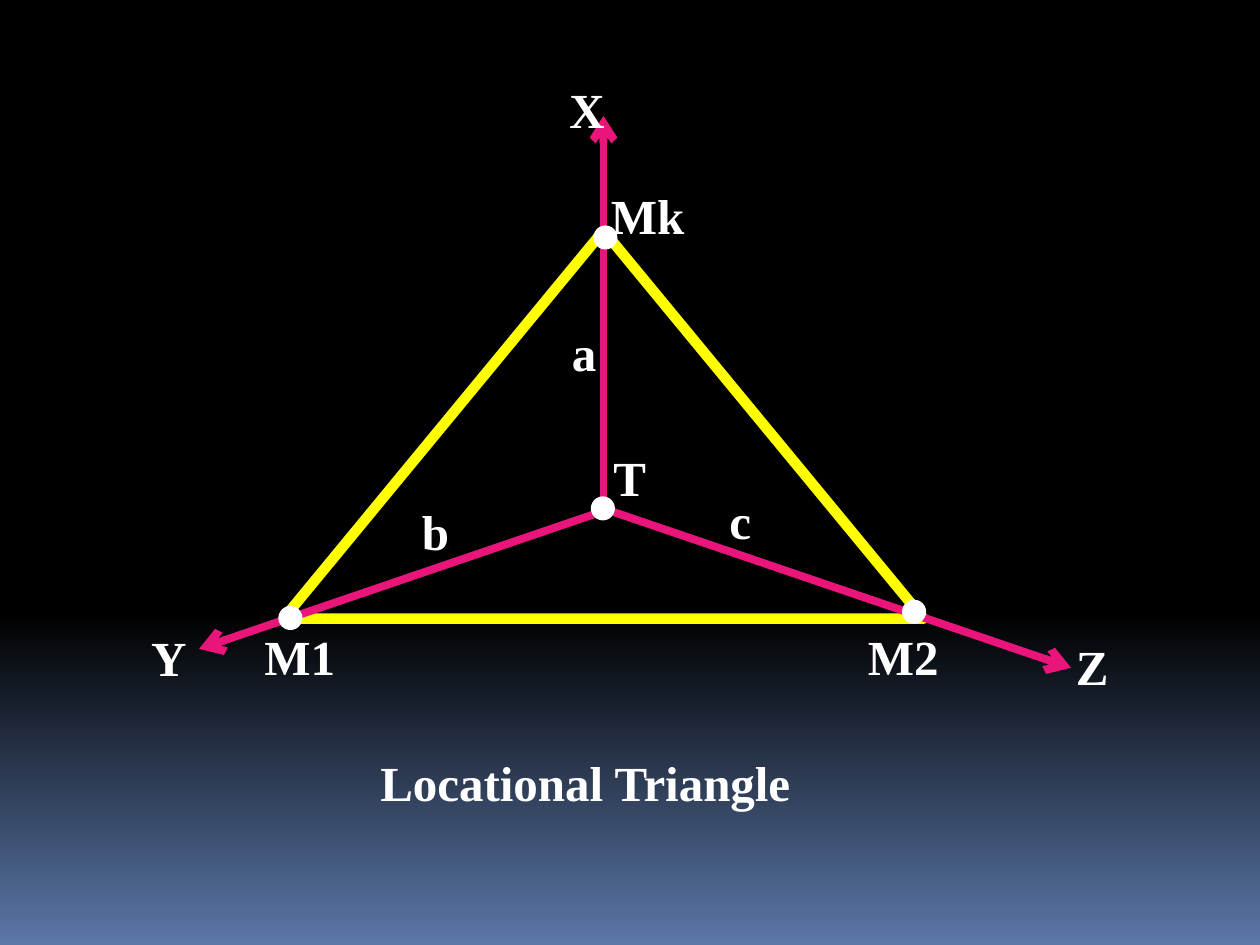
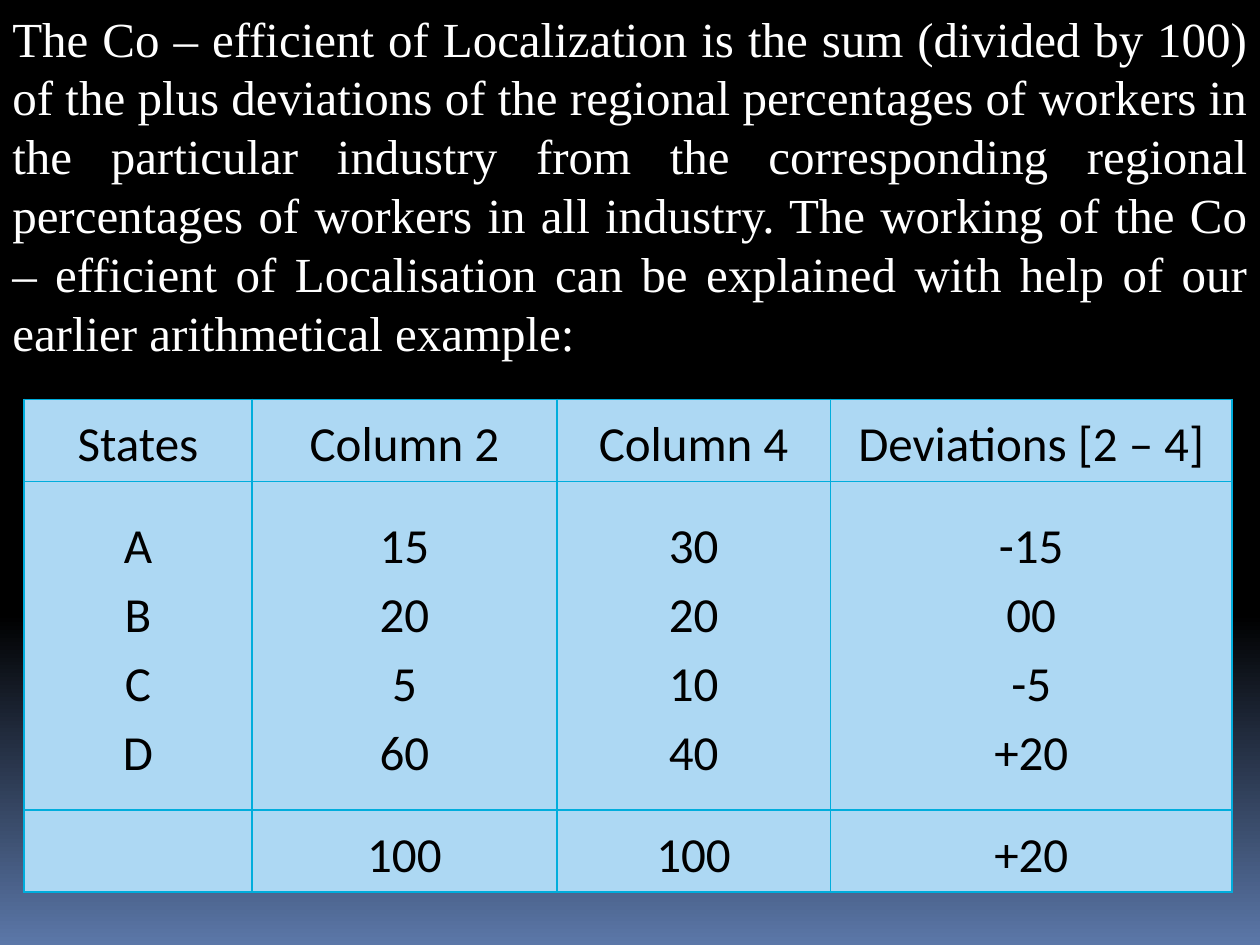
from lxml import etree
from pptx import Presentation
from pptx.dml.color import RGBColor
from pptx.enum import shapes, text
from pptx.oxml.ns import qn
from pptx.util import Inches, Pt

BLACK, WHITE, DUSK = "000000", "FFFFFF", "5B77A8"
YELLOW, PINK, SKY, CYAN = "FFFF00", "EA157A", "ADD8F3", "00ADDC"
SERIF, SANS, SIZE = "Times New Roman", "Calibri", 28

TRIANGLE = (2.25, 1.83, 5.08, 3.08)
AXES = [
    ((4.79, 4), (4.79, 0.92)),
    ((4.83, 4.05), (8.5, 5.3)),
    ((4.75, 4.07), (1.58, 5.15)),
]
DOT = 0.17
DOTS = [(4.72, 1.8), (4.7, 3.95), (2.22, 4.82), (7.17, 4.77)]
LABEL_HEIGHT = 0.57
LABELS = [
    ("Mk", 4.75, 1.42, 0.79),
    ("M2", 6.79, 4.92, 0.77),
    ("M1", 2, 4.92, 0.77),
    ("a", 4.44, 2.51, 0.4),
    ("T", 4.77, 3.5, 0.46),
    ("c", 5.69, 3.84, 0.38),
    ("b", 3.25, 3.93, 0.42),
    ("X", 4.42, 0.58, 0.49),
    ("Y", 1.1, 4.93, 0.49),
    ("Z", 8.44, 5, 0.46),
]
CAPTION = "Locational Triangle"

DEFINITION = (
    "The Co – efficient of Localization is the sum (divided by 100) of the plus "
    "deviations of the regional percentages of workers in the particular industry "
    "from the corresponding regional percentages of workers in all industry. "
    "The working of the Co – efficient of Localisation can be explained with help "
    "of our earlier arithmetical example:"
)
HEADINGS = ["States", "Column 2", "Column 4", "Deviations [2 – 4]"]
STATES = [
    ("A", "15", "30", "-15"),
    ("B", "20", "20", "00"),
    ("C", "5", "10", "-5"),
    ("D", "60", "40", "+20"),
]
TOTALS = ["", "100", "100", "+20"]
COLUMN_WIDTHS = [1.81, 2.42, 2.17, 3.19]
ROW_HEIGHTS = [0.65, 2.61, 0.65]


def rgb(value):
    return RGBColor.from_string(value)


def inches(values):
    return [Inches(value) for value in values]


def set_font(paragraph, name, color, bold=False):
    font = paragraph.font
    font.name, font.size, font.bold = name, Pt(SIZE), bold
    font.color.rgb = rgb(color)


def set_line(line, color, width):
    line.color.rgb = rgb(color)
    line.width = Pt(width)


def add_slide(deck):
    slide = deck.slides.add_slide(deck.slide_layouts[6])
    fill = slide.background.fill
    fill.gradient()
    fill.gradient_angle = 270
    for stop, (position, color) in zip(fill.gradient_stops, [(0.65, BLACK), (1, DUSK)]):
        stop.position = position
        stop.color.rgb = rgb(color)
    return slide


def add_text(slide, words, box, bold=False, wrap=True):
    frame = slide.shapes.add_textbox(*inches(box)).text_frame
    frame.word_wrap = wrap
    frame.auto_size = text.MSO_AUTO_SIZE.SHAPE_TO_FIT_TEXT
    frame.text = words
    set_font(frame.paragraphs[0], SERIF, WHITE, bold)
    return frame


def add_outline(slide, kind, box, color, width):
    shape = slide.shapes.add_shape(kind, *inches(box))
    shape.shadow.inherit = False
    shape.fill.background()
    set_line(shape.line, color, width)
    return shape


def add_axis(slide, start, end):
    axis = slide.shapes.add_connector(
        shapes.MSO_CONNECTOR.STRAIGHT, *inches(start + end))
    set_line(axis.line, PINK, 4.5)
    properties = axis.element.spPr
    etree.SubElement(properties.find(qn("a:ln")), qn("a:tailEnd"), type="arrow")
    etree.SubElement(properties, qn("a:effectLst"))


def set_borders(cell):
    properties = cell._tc.get_or_add_tcPr()
    for index, side in enumerate(["lnL", "lnR", "lnT", "lnB"]):
        border = etree.Element(qn(f"a:{side}"), w=str(Pt(0.94)))
        solid = etree.SubElement(border, qn("a:solidFill"))
        etree.SubElement(solid, qn("a:srgbClr"), val=CYAN)
        properties.insert(index, border)


def fill_cell(cell, words):
    cell.fill.solid()
    cell.fill.fore_color.rgb = rgb(SKY)
    cell.vertical_anchor = text.MSO_ANCHOR.MIDDLE
    cell.margin_left = cell.margin_right = Inches(0.07)
    cell.margin_top = cell.margin_bottom = 0
    cell.text = words
    for paragraph in cell.text_frame.paragraphs:
        paragraph.alignment = text.PP_ALIGN.CENTER
        paragraph.line_spacing = 1.15
        set_font(paragraph, SANS, BLACK)
    set_borders(cell)


def build_triangle(deck):
    slide = add_slide(deck)
    add_outline(slide, shapes.MSO_SHAPE.ISOSCELES_TRIANGLE, TRIANGLE, YELLOW, 6)
    for start, end in AXES:
        add_axis(slide, start, end)
    for left, top in DOTS:
        dot = add_outline(slide, shapes.MSO_SHAPE.OVAL, (left, top, DOT, DOT), WHITE, 1.5)
        dot.fill.solid()
        dot.fill.fore_color.rgb = rgb(WHITE)
    for words, left, top, width in LABELS:
        add_text(slide, words, (left, top, width, LABEL_HEIGHT), bold=True, wrap=False)
    add_text(slide, CAPTION, (2.92, 5.92, 5, LABEL_HEIGHT), bold=True)


def build_deviations(deck):
    slide = add_slide(deck)
    state_lists = ["\n".join(column) for column in zip(*STATES)]
    rows = [HEADINGS, state_lists, TOTALS]
    table = slide.shapes.add_table(
        len(rows), len(HEADINGS),
        *inches((0.19, 3.17, sum(COLUMN_WIDTHS), sum(ROW_HEIGHTS)))).table
    for column, width in zip(table.columns, COLUMN_WIDTHS):
        column.width = Inches(width)
    for row, height, entries in zip(table.rows, ROW_HEIGHTS, rows):
        row.height = Inches(height)
        for cell, words in zip(row.cells, entries):
            fill_cell(cell, words)
    definition = add_text(slide, DEFINITION, (0, 0, 10, 2.93))
    definition.vertical_anchor = text.MSO_ANCHOR.MIDDLE
    definition.paragraphs[0].alignment = text.PP_ALIGN.JUSTIFY


def main():
    deck = Presentation()
    deck.slide_width, deck.slide_height = Inches(10), Inches(7.5)
    build_triangle(deck)
    build_deviations(deck)
    deck.save("out.pptx")


if __name__ == "__main__":
    main()
